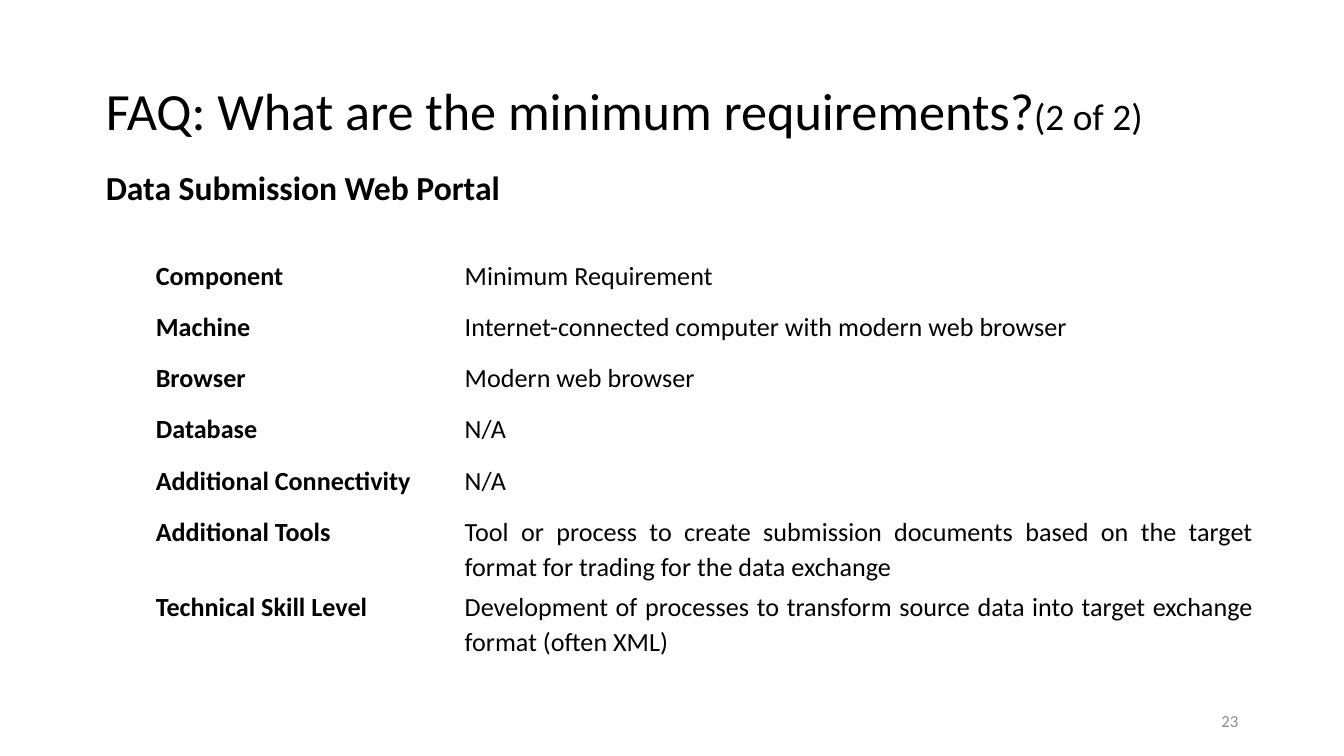
import pptx
import pptx.util
import pptx.dml.color
import pptx.enum.text
import pptx.oxml.ns
import lxml.etree

Pt = pptx.util.Pt
ALIGN = pptx.enum.text.PP_ALIGN
ANCHOR = pptx.enum.text.MSO_ANCHOR

# Content
TITLE = [("FAQ: What are the minimum requirements?", "title"), ("(2 of 2)", "part")]
SECTION = "Data Submission Web Portal"
REQUIREMENTS = [
    ("Component", "Minimum Requirement"),
    ("Machine", "Internet-connected computer with modern web browser"),
    ("Browser", "Modern web browser"),
    ("Database", "N/A"),
    ("Additional Connectivity", "N/A"),
    ("Additional Tools", "Tool or process to create submission documents based on "
     "the target format for trading for the data exchange"),
    ("Technical Skill Level", "Development of processes to transform source data into "
     "target exchange format (often XML)"),
]
PAGE_NUMBER = "23"

# Theme and layout, in points
THEME = {
    "font": "Calibri",
    "ink": "000000",
    "muted": "8C8C8C",
    "size": {"title": 28, "part": 20, "section": 18, "cell": 14, "page": 9},
}
SLIDE_SIZE = (720, 405)
TITLE_BOX = (49.5, 21.6, 621, 78.3)
SECTION_BOX = (49.5, 88.5, 621, 257)
PAGE_BOX = (508.5, 375.4, 162, 21.6)
TABLE_AT = (80.5, 136.5)
COLUMNS = (165.5, 428.5)
ROWS = [27.4] * 5 + [36.7, 33.8]


def add_run(paragraph, text, role, color="ink", bold=False):
    run = paragraph.add_run()
    run.text = text
    run.font.name = THEME["font"]
    run.font.size = Pt(THEME["size"][role])
    run.font.bold = bold
    run.font.color.rgb = pptx.dml.color.RGBColor.from_string(THEME[color])


def place(shape, box, anchor):
    shape.left, shape.top, shape.width, shape.height = map(Pt, box)
    frame = shape.text_frame
    frame.word_wrap = True
    frame.auto_size = pptx.enum.text.MSO_AUTO_SIZE.NONE
    frame.vertical_anchor = anchor
    return frame.paragraphs[0]


deck = pptx.Presentation()
deck.slide_width, deck.slide_height = map(Pt, SLIDE_SIZE)
slide = deck.slides.add_slide(deck.slide_layouts[1])

# Title
heading = place(slide.shapes.title, TITLE_BOX, ANCHOR.MIDDLE)
heading.alignment = ALIGN.LEFT
heading.line_spacing = 0.9
for text, role in TITLE:
    add_run(heading, text, role)

# Section heading, without bullet or indent
section = place(slide.placeholders[1], SECTION_BOX, ANCHOR.TOP)
section.level = 1
section.line_spacing = 0.9
section.space_before = Pt(3.8)
add_run(section, SECTION, "section", bold=True)
properties = section._p.get_or_add_pPr()
properties.set("marL", "0")
properties.set("indent", "0")
lxml.etree.SubElement(properties, pptx.oxml.ns.qn("a:buNone"))

# Requirements table
requirements = slide.shapes.add_table(
    len(ROWS), len(COLUMNS), *map(Pt, TABLE_AT + (sum(COLUMNS), sum(ROWS)))).table
requirements.first_row = False
requirements.horz_banding = False
for column, width in zip(requirements.columns, COLUMNS):
    column.width = Pt(width)
for row, height, texts in zip(requirements.rows, ROWS, REQUIREMENTS):
    row.height = Pt(height)
    for index, (cell, text) in enumerate(zip(row.cells, texts)):
        cell.fill.background()
        cell.margin_left = cell.margin_right = Pt(3)
        cell.margin_top = cell.margin_bottom = Pt(1.5)
        entry = cell.text_frame.paragraphs[0]
        entry.alignment = ALIGN.JUSTIFY
        entry.line_spacing = 1.1
        add_run(entry, text, "cell", bold=index == 0)

# Page number
page = place(slide.shapes.add_textbox(*map(Pt, PAGE_BOX)), PAGE_BOX, ANCHOR.MIDDLE)
page.alignment = ALIGN.RIGHT
add_run(page, PAGE_NUMBER, "page", "muted")

deck.save("out.pptx")
